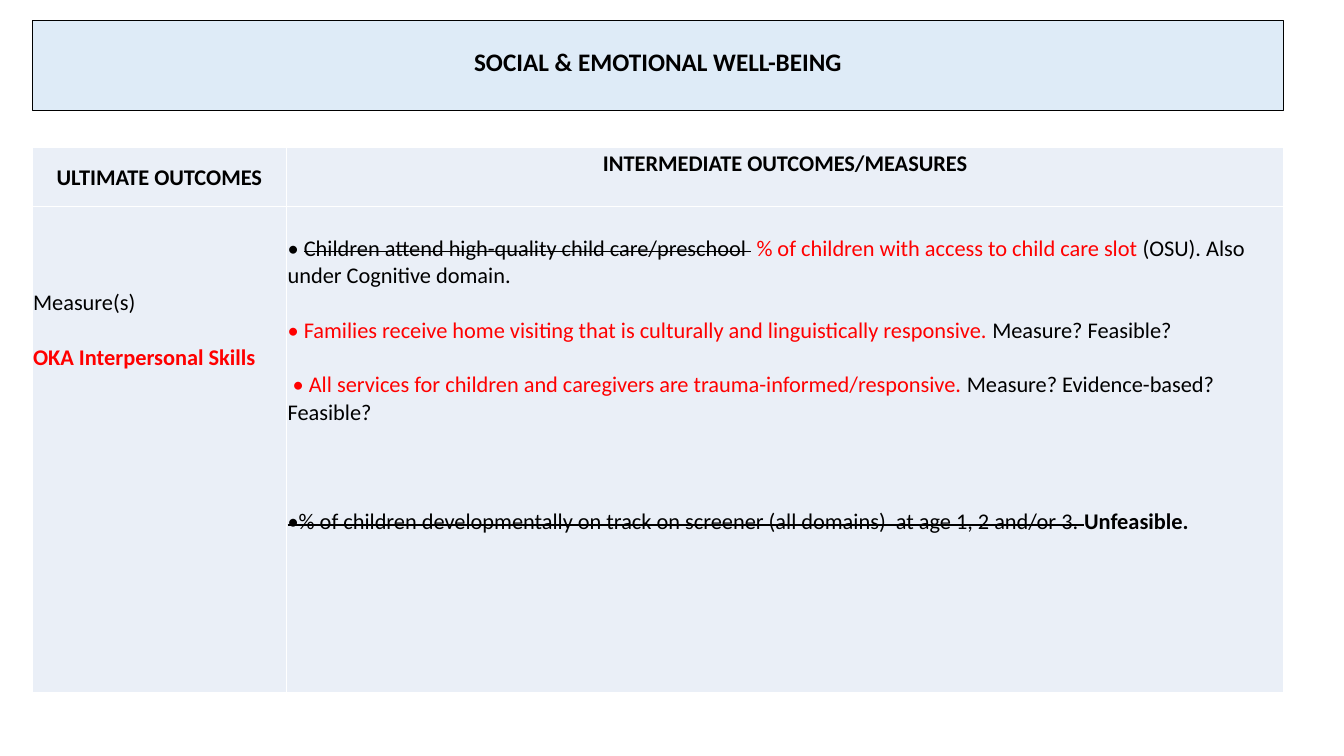
from pptx import Presentation
from pptx.dml.color import RGBColor
from pptx.enum.shapes import MSO_SHAPE
from pptx.enum.text import MSO_ANCHOR, PP_ALIGN
from pptx.util import Pt

RECTANGLE = MSO_SHAPE.RECTANGLE
MIDDLE, TOP = MSO_ANCHOR.MIDDLE, MSO_ANCHOR.TOP
CENTER, LEFT = PP_ALIGN.CENTER, PP_ALIGN.LEFT

BLACK = RGBColor(0x00, 0x00, 0x00)
RED = RGBColor(0xFF, 0x00, 0x00)
TITLE_BLUE = RGBColor(0xDE, 0xEB, 0xF7)
CELL_BLUE = RGBColor(0xEA, 0xEF, 0xF7)

FONT = "Calibri"
LINE = 19.5
INSET = 0.7

TITLE_BOX = (23, 14.6, 894, 64.6)
TABLE_BOX = (23, 105.4, 894, 389.2)
ULTIMATE_WIDTH = 181.8
HEADER_HEIGHT = 42.2

PLAIN, CHANGED, DROPPED = "plain", "changed", "dropped"
STRONG, STRONG_CHANGED = "strong", "strong changed"

HEADINGS = ["ULTIMATE OUTCOMES", "INTERMEDIATE OUTCOMES/MEASURES"]
ULTIMATE = [
    (0, [("Measure(s)", PLAIN)]),
    (1, [("OKA Interpersonal Skills", STRONG_CHANGED)]),
]
INTERMEDIATE = [
    (0, [("• ", PLAIN),
         ("Children attend high-quality child care/preschool ", DROPPED),
         (" ", PLAIN),
         ("% of children with access to child care slot ", CHANGED),
         ("(OSU). Also under Cognitive domain.", PLAIN)]),
    (1, [("• Families receive home visiting that is culturally and "
          "linguistically responsive. ", CHANGED),
         ("Measure? Feasible?", PLAIN)]),
    (1, [(" • All services for children and caregivers are "
          "trauma-informed/responsive. ", CHANGED),
         ("Measure? Evidence-based? Feasible?", PLAIN)]),
    (3, [("•% of children developmentally on track on screener (all domains)  "
          "at age 1, 2 and/or 3. ", DROPPED),
         ("Unfeasible.", STRONG)]),
]


def write_paragraph(paragraph, pieces, size, align, lines_before=0):
    paragraph.alignment = align
    paragraph.space_before = Pt(lines_before * LINE)
    paragraph.font.name = FONT
    paragraph.font.size = Pt(size)
    for text, style in pieces:
        run = paragraph.add_run()
        run.text = text
        run.font.name = FONT
        run.font.size = Pt(size)
        run.font.bold = style in (STRONG, STRONG_CHANGED)
        run.font.color.rgb = RED if style in (CHANGED, STRONG_CHANGED) else BLACK
        if style == DROPPED:
            run._r.get_or_add_rPr().set("strike", "sngStrike")


def fill_cell(cell, entries, align, anchor, lines_above=0, lines_below=0):
    cell.fill.solid()
    cell.fill.fore_color.rgb = CELL_BLUE
    cell.vertical_anchor = anchor
    cell.margin_left = cell.margin_right = Pt(INSET)
    cell.margin_top = Pt(INSET + lines_above * LINE)
    cell.margin_bottom = Pt(lines_below * LINE)
    frame = cell.text_frame
    for index, (gap, pieces) in enumerate(entries):
        paragraph = frame.add_paragraph() if index else frame.paragraphs[0]
        write_paragraph(paragraph, pieces, 16, align, gap)


def add_title(slide, box):
    banner = slide.shapes.add_shape(RECTANGLE, *map(Pt, box))
    banner.shadow.inherit = False
    banner.fill.solid()
    banner.fill.fore_color.rgb = TITLE_BLUE
    banner.line.color.rgb = BLACK
    banner.line.width = Pt(0.75)
    frame = banner.text_frame
    frame.word_wrap = True
    frame.vertical_anchor = MIDDLE
    frame.margin_bottom = Pt(6.6)
    heading = [("SOCIAL & EMOTIONAL WELL-BEING", STRONG)]
    write_paragraph(frame.paragraphs[0], heading, 18, CENTER)
    frame.paragraphs[0].line_spacing = 0.9


def add_outcomes(slide, box):
    width, height = box[2:]
    outcomes = slide.shapes.add_table(2, 2, *map(Pt, box)).table
    outcomes.first_row = False
    outcomes.horz_banding = False
    outcomes.columns[0].width = Pt(ULTIMATE_WIDTH)
    outcomes.columns[1].width = Pt(width - ULTIMATE_WIDTH)
    outcomes.rows[0].height = Pt(HEADER_HEIGHT)
    outcomes.rows[1].height = Pt(height - HEADER_HEIGHT)
    for column, heading in enumerate(HEADINGS):
        fill_cell(outcomes.cell(0, column), [(0, [(heading, STRONG)])],
                  CENTER, MIDDLE, lines_below=column)
    fill_cell(outcomes.cell(1, 0), ULTIMATE, LEFT, TOP, lines_above=3)
    fill_cell(outcomes.cell(1, 1), INTERMEDIATE, LEFT, TOP, lines_above=1)


def main():
    deck = Presentation()
    deck.slide_width, deck.slide_height = Pt(960), Pt(540)
    slide = deck.slides.add_slide(deck.slide_layouts[6])
    add_outcomes(slide, TABLE_BOX)
    add_title(slide, TITLE_BOX)
    deck.save("out.pptx")


if __name__ == "__main__":
    main()
